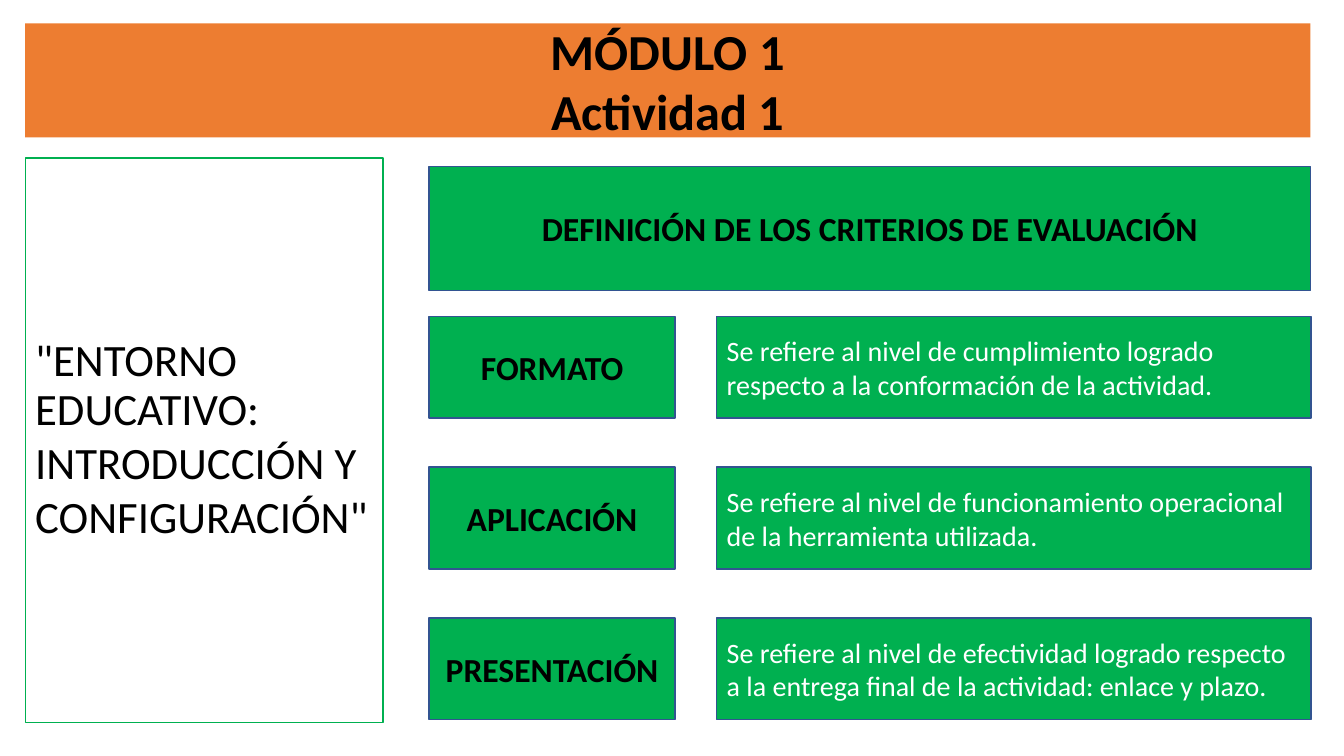
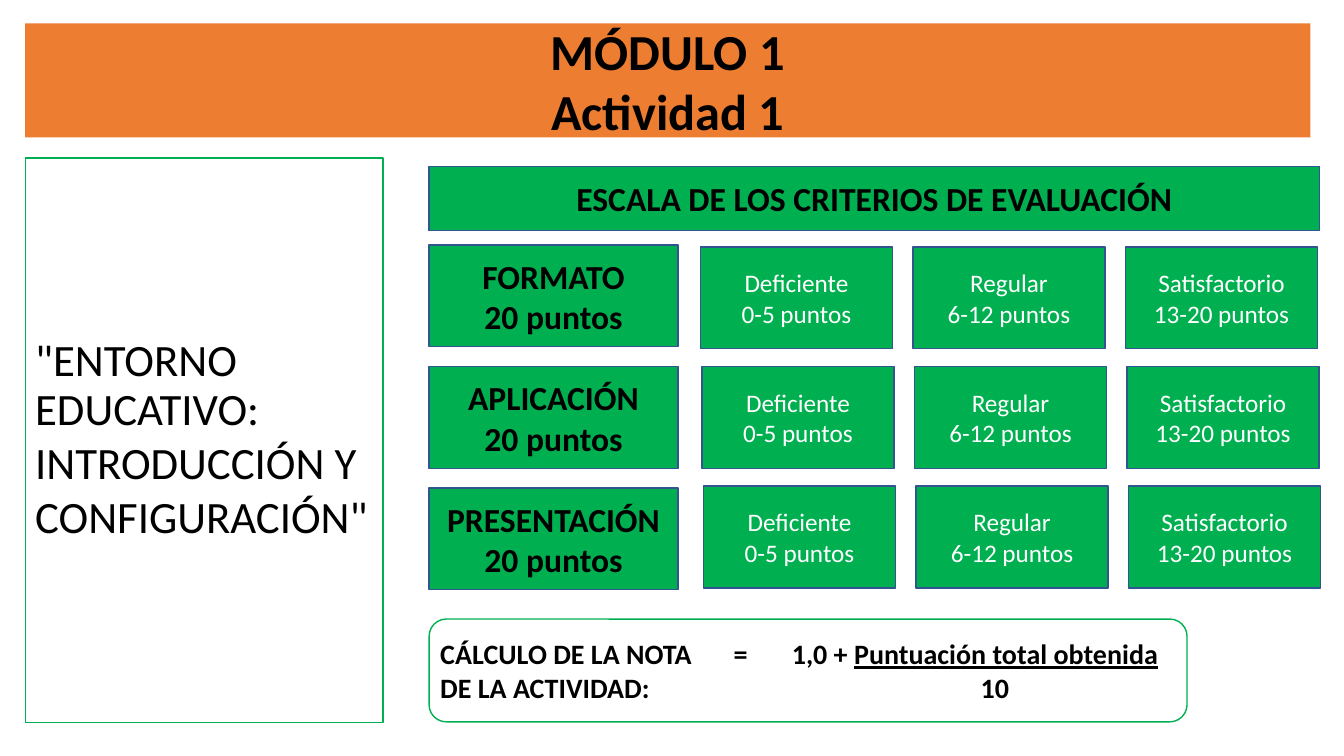
"""Build two slides on the criteria and the scale used to grade activity 1."""
from lxml import etree
from pptx import Presentation
from pptx.dml.color import RGBColor
from pptx.enum import shapes, text
from pptx.oxml import ns
from pptx.util import Pt

FONT = "Calibri"
COLORS = {"band": "ED7D31", "green": "00B050", "edge": "325491",
          "dark": "000000", "light": "FFFFFF"}
LEFT, CENTER = text.PP_ALIGN.LEFT, text.PP_ALIGN.CENTER
RECT, ROUNDED = shapes.MSO_SHAPE.RECTANGLE, shapes.MSO_SHAPE.ROUNDED_RECTANGLE
LABEL_X, ROW_H = 306.5, 72.7

CRITERIA = [
    ("FORMATO", "Se refiere al nivel de cumplimiento logrado respecto a la "
                "conformación de la actividad."),
    ("APLICACIÓN", "Se refiere al nivel de funcionamiento operacional de la "
                   "herramienta utilizada."),
    ("PRESENTACIÓN", "Se refiere al nivel de efectividad logrado respecto a la "
                     "entrega final de la actividad: enlace y plazo."),
]
LEVELS = [("Deficiente", "0-5 puntos"), ("Regular", "6-12 puntos"),
          ("Satisfactorio", "13-20 puntos")]


def rgb(name):
    return RGBColor.from_string(COLORS[name])


def style(p, size, color="dark", bold=False, align=LEFT):
    p.alignment = align
    p.font.name = FONT
    p.font.size = Pt(size)
    p.font.bold = bold
    p.font.color.rgb = rgb(color)


def write(tf, lines, size, **look):
    tf.word_wrap = True
    for i, line in enumerate(lines):
        p = tf.add_paragraph() if i else tf.paragraphs[0]
        p.add_run().text = line
        style(p, size, **look)


def add_box(s, x, y, w, h, fill=None, line=None, kind=RECT):
    sp = s.shapes.add_shape(kind, Pt(x), Pt(y), Pt(w), Pt(h))
    sp.shadow.inherit = False
    if fill:
        sp.fill.solid()
        sp.fill.fore_color.rgb = rgb(fill)
    else:
        sp.fill.background()
    if line:
        sp.line.color.rgb = rgb(line)
        sp.line.width = Pt(1)
    else:
        sp.line.fill.background()
    sp.text_frame.vertical_anchor = text.MSO_ANCHOR.MIDDLE
    return sp


def add_heading(s, x, y, w, h, *lines):
    sp = add_box(s, x, y, w, h, "green", "edge")
    write(sp.text_frame, lines, 24, bold=True, align=CENTER)


def add_detail(s, x, y, w, lines, size, align):
    sp = add_box(s, x, y, w, ROW_H, "green", "edge")
    write(sp.text_frame, lines, size, color="light", align=align)


def add_textbox(s, x, y, w, h):
    tf = s.shapes.add_textbox(Pt(x), Pt(y), Pt(w), Pt(h)).text_frame
    tf.word_wrap = True
    return tf


def add_tab(p, position, align):
    tabs = etree.Element(ns.qn("a:tabLst"))
    etree.SubElement(tabs, ns.qn("a:tab"), pos=str(Pt(position)), algn=align)
    p._p.get_or_add_pPr().insert(0, tabs)


def add_activity_slide(prs):
    s = prs.slides.add_slide(prs.slide_layouts[6])
    band = add_box(s, 18, 16.8, 918, 81.4, "band")
    write(band.text_frame, ["MÓDULO 1", "Actividad 1"], 36, bold=True, align=CENTER)
    panel = add_box(s, 18, 113, 255.6, 403.2, line="green")
    write(panel.text_frame,
          ['"ENTORNO EDUCATIVO:', 'INTRODUCCIÓN Y CONFIGURACIÓN"'], 32)
    panel.text_frame.paragraphs[0].line_spacing = 0.9
    return s


def add_formula(s):
    add_box(s, LABEL_X, 442.2, 541.4, 73.4, line="green", kind=ROUNDED)
    label = add_textbox(s, 307.4, 451.4, 216, 55.4)
    write(label, ["CÁLCULO DE LA NOTA DE LA ACTIVIDAD:"], 20, bold=True)
    tf = add_textbox(s, 517, 451.4, 358.6, 55.4)
    write(tf, ["=\t1,0 + ", "\t10"], 20, bold=True)
    top, bottom = tf.paragraphs
    r = top.add_run()
    r.text = "Puntuación total obtenida"
    r.font.underline = True
    add_tab(top, 41.5, "l")
    add_tab(bottom, 186.5, "ctr")


def build_definitions(prs):
    s = add_activity_slide(prs)
    add_heading(s, LABEL_X, 118.8, 629.5, 88.6, "DEFINICIÓN DE LOS CRITERIOS DE EVALUACIÓN")
    for row, (name, meaning) in enumerate(CRITERIA):
        y = 226 + 107.7 * row
        add_heading(s, LABEL_X, y, 175.7, ROW_H, name)
        add_detail(s, 512, y, 424.5, [meaning], 20, LEFT)


def build_scale(prs):
    s = add_activity_slide(prs)
    add_heading(s, LABEL_X, 118.8, 636, 46, "ESCALA DE LOS CRITERIOS DE EVALUACIÓN")
    for row, (name, _) in enumerate(CRITERIA):
        add_heading(s, LABEL_X, 175 + 86.8 * row, 177.8, ROW_H, name, "20 puntos")
        for col, level in enumerate(LEVELS):
            add_detail(s, 500.4 + 151.8 * col + 1.1 * row, 176.4 + 85.4 * row,
                       137, level, 18, CENTER)
    add_formula(s)


def main():
    prs = Presentation()
    prs.slide_width, prs.slide_height = Pt(960), Pt(540)
    build_definitions(prs)
    build_scale(prs)
    prs.save("out.pptx")


if __name__ == "__main__":
    main()
